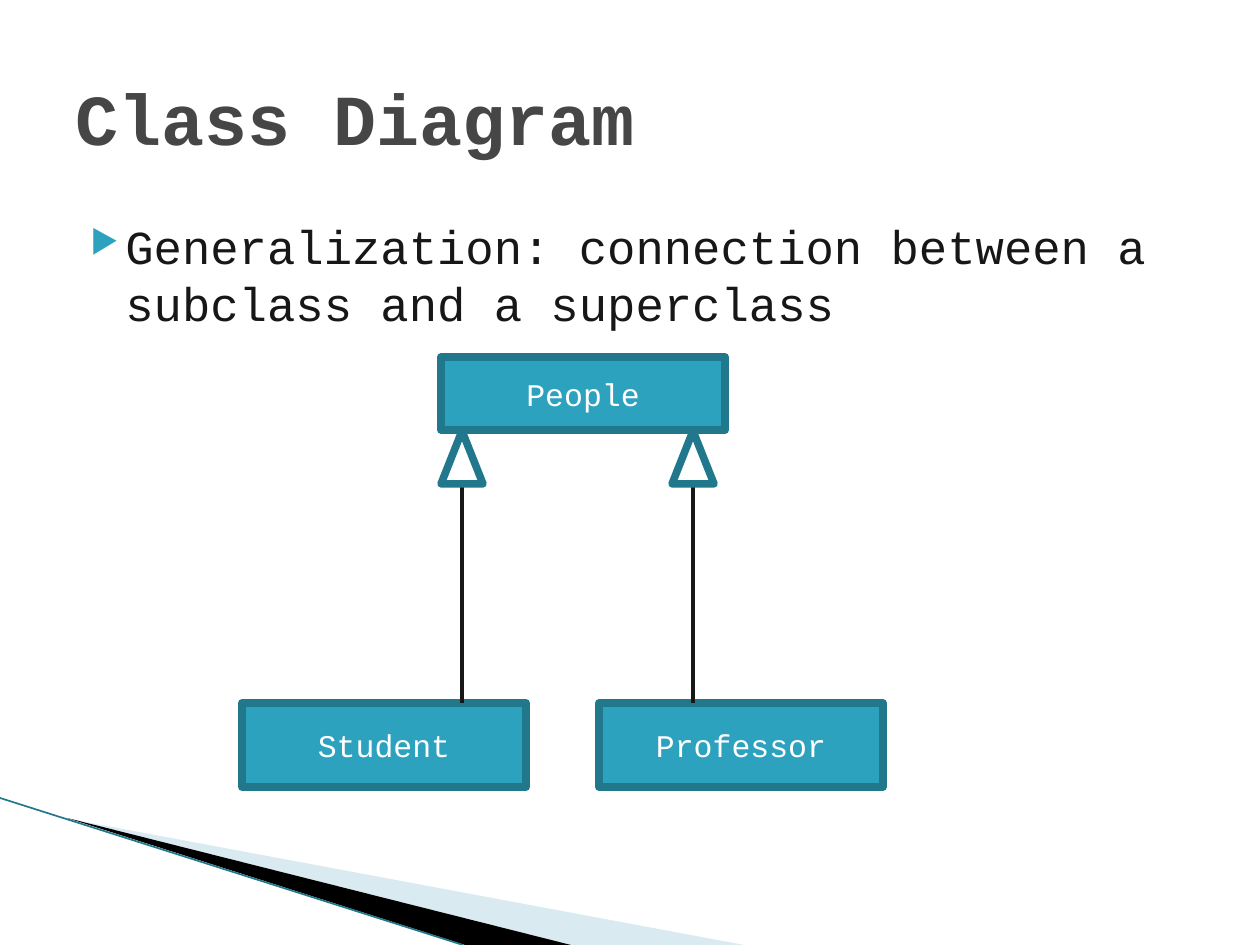
from dataclasses import dataclass

from lxml import etree
from pptx import Presentation, util as u
from pptx.dml.color import RGBColor
from pptx.enum import shapes, text
from pptx.oxml.ns import qn


@dataclass(frozen=True)
class Theme:
    font: str = "Courier New"
    title: str = "464646"
    ink: str = "171717"
    accent: str = "2DA2BF"
    edge: str = "21788D"
    white: str = "FFFFFF"
    black: str = "000000"
    pale: str = "D9EAF1"
    title_size: int = 41
    body_size: int = 27
    label_size: int = 18
    edge_width: float = 4.33
    link_width: float = 1.75
    rule_width: float = 0.95


def px(value):
    return u.Emu(round(value * 914400 / 126))


class ClassDiagram:
    """Draws the elements of a class diagram slide in one theme."""

    def __init__(self, slide, theme):
        self.slide = slide
        self.theme = theme

    def set_font(self, paragraph, size, color, bold=False):
        values = {"name": self.theme.font, "size": u.Pt(size), "bold": bold}
        for name, value in values.items():
            setattr(paragraph.font, name, value)
        paragraph.font.color.rgb = RGBColor.from_string(color)

    def paint(self, shape, fill, edge=None):
        shape.shadow.inherit = False
        shape.fill.solid()
        shape.fill.fore_color.rgb = RGBColor.from_string(fill)
        if edge:
            shape.line.color.rgb = RGBColor.from_string(edge)
            shape.line.width = u.Pt(self.theme.edge_width)
        else:
            shape.line.fill.background()

    def wedge(self, points, color):
        builder = self.slide.shapes.build_freeform(*points[0], scale=px(1))
        builder.add_line_segments(points[1:], close=True)
        self.paint(builder.convert_to_shape(), color)

    def line(self, start, end, color, width):
        connector = self.slide.shapes.add_connector(
            shapes.MSO_CONNECTOR.STRAIGHT, *map(px, start + end))
        connector.line.color.rgb = RGBColor.from_string(color)
        connector.line.width = u.Pt(width)
        etree.SubElement(connector._element.spPr, qn("a:effectLst"))

    def text_box(self, box, words, size, color, anchor, bold=False, bullet=None):
        frame = self.slide.shapes.add_textbox(*map(px, box)).text_frame
        for name, value in {"word_wrap": True, "vertical_anchor": anchor}.items():
            setattr(frame, name, value)
        paragraph = frame.paragraphs[0]
        paragraph.text = words
        if bullet:
            self.add_bullet(paragraph, bullet)
        self.set_font(paragraph, size, color, bold)

    def add_bullet(self, paragraph, character):
        properties = paragraph._p.get_or_add_pPr()
        properties.set("marL", str(px(50)))
        properties.set("indent", str(-px(35)))
        color = etree.SubElement(properties, qn("a:buClr"))
        etree.SubElement(color, qn("a:srgbClr"), val=self.theme.accent)
        etree.SubElement(properties, qn("a:buSzPct"), val="68000")
        etree.SubElement(properties, qn("a:buChar"), char=character)

    def class_box(self, box, name):
        shape = self.slide.shapes.add_shape(
            shapes.MSO_SHAPE.RECTANGLE, *map(px, box))
        self.paint(shape, self.theme.accent, self.theme.edge)
        shape.text_frame.vertical_anchor = text.MSO_ANCHOR.MIDDLE
        paragraph = shape.text_frame.paragraphs[0]
        paragraph.text = name
        paragraph.alignment = text.PP_ALIGN.CENTER
        self.set_font(paragraph, self.theme.label_size, self.theme.white)

    def generalization(self, center, top, bottom):
        self.line((center, bottom), (center, top + 20),
                  self.theme.ink, self.theme.link_width)
        head = self.slide.shapes.add_shape(
            shapes.MSO_SHAPE.ISOSCELES_TRIANGLE,
            *map(px, (center - 21, top, 42, 53)))
        self.paint(head, self.theme.white, self.theme.edge)


def main():
    presentation = Presentation()
    presentation.slide_width, presentation.slide_height = px(1260), px(945)
    slide = presentation.slides.add_slide(presentation.slide_layouts[6])
    theme = Theme()
    diagram = ClassDiagram(slide, theme)

    diagram.wedge([(69, 819), (744, 945), (571, 945)], theme.pale)
    diagram.wedge([(67, 818), (571, 945), (465, 945)], theme.black)
    diagram.line((0, 798), (463, 945), theme.edge, theme.rule_width)

    diagram.text_box((63, 211, 1134, 617),
                     "Generalization: connection between a subclass and a superclass",
                     theme.body_size, theme.ink, text.MSO_ANCHOR.TOP, bullet="▶")
    diagram.text_box((63, 38, 1134, 158), "Class Diagram", theme.title_size,
                     theme.title, text.MSO_ANCHOR.MIDDLE, bold=True)

    diagram.class_box((441, 357, 284, 73), "People")
    for left, name in ((242, "Student"), (599, "Professor")):
        diagram.class_box((left, 703, 284, 84), name)
    for center in (462, 693):
        diagram.generalization(center, 431, 703)

    presentation.save("out.pptx")


if __name__ == "__main__":
    main()
